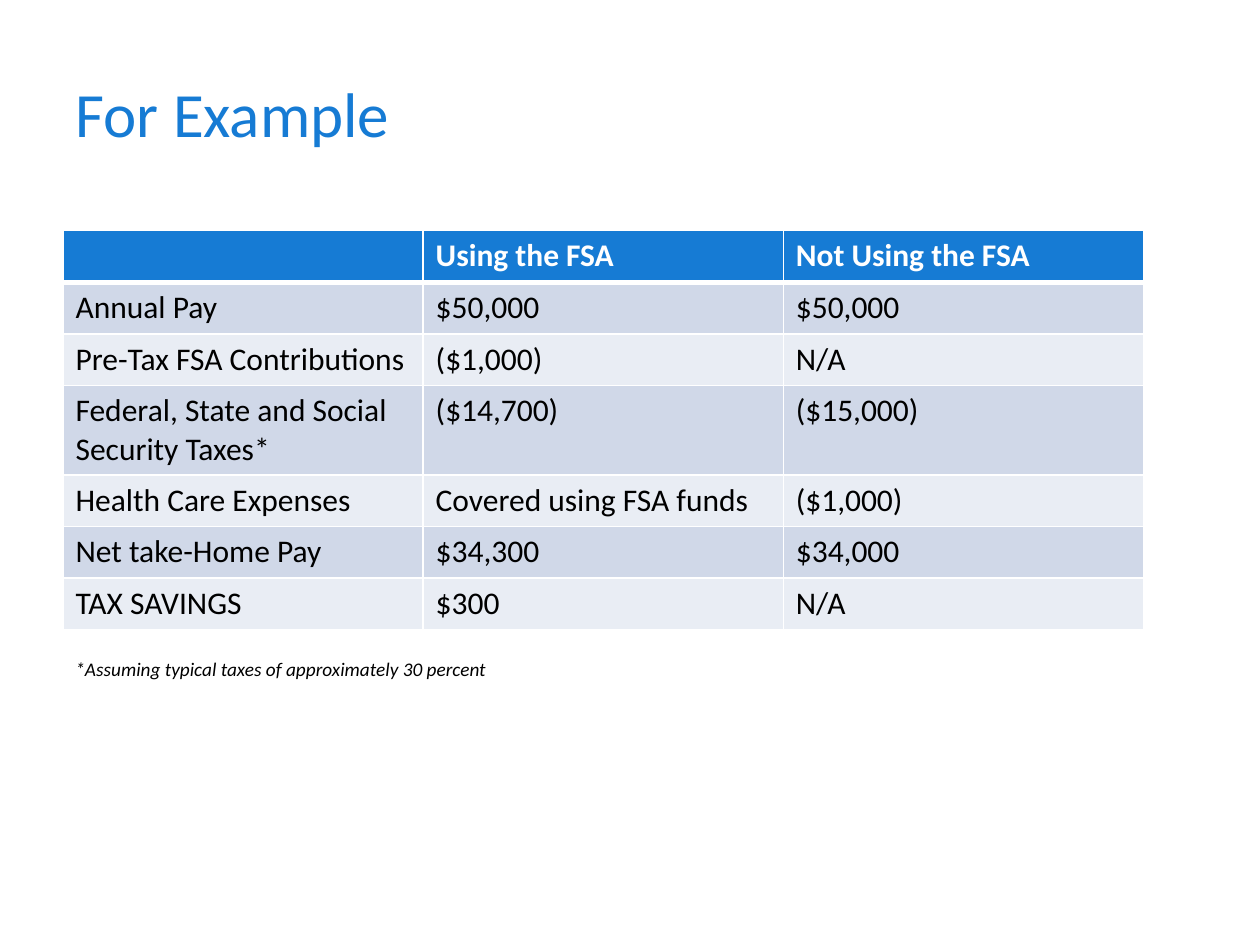
from dataclasses import dataclass

from lxml import etree
from pptx import Presentation
from pptx.dml.color import RGBColor
from pptx.enum.text import MSO_ANCHOR, PP_ALIGN
from pptx.oxml.ns import qn
from pptx.slide import Slide
from pptx.table import _Cell
from pptx.text.text import TextFrame
from pptx.util import Cm, Pt

LEFT = PP_ALIGN.LEFT
TOP = MSO_ANCHOR.TOP
MIDDLE = MSO_ANCHOR.MIDDLE

BLUE = RGBColor(0x16, 0x7B, 0xD4)
DARK_BAND = RGBColor(0xD0, 0xD8, 0xE8)
LIGHT_BAND = RGBColor(0xE9, 0xED, 0xF4)
WHITE = RGBColor(0xFF, 0xFF, 0xFF)
BLACK = RGBColor(0x00, 0x00, 0x00)

FONT = "Calibri"
MARGIN = Cm(1.27)
TABLE_TOP = Cm(4.65)
COLUMN_WIDTH = Cm(7.26)
ROW_HEIGHT = Cm(1.04)
THIN = Pt(1)
THICK = Pt(3)


@dataclass(frozen=True)
class ComparisonRow:
    label: str
    using: str
    not_using: str


HEADER = ComparisonRow("", "Using the FSA", "Not Using the FSA")
ROWS = [
    ComparisonRow("Annual Pay", "$50,000", "$50,000"),
    ComparisonRow("Pre-Tax FSA Contributions", "($1,000)", "N/A"),
    ComparisonRow("Federal, State and Social Security Taxes*", "($14,700)", "($15,000)"),
    ComparisonRow("Health Care Expenses", "Covered using FSA funds", "($1,000)"),
    ComparisonRow("Net take-Home Pay", "$34,300", "$34,000"),
    ComparisonRow("TAX SAVINGS", "$300", "N/A"),
]


def write_text(frame: TextFrame, text: str, *, size: int, color: RGBColor = BLACK,
               bold: bool = False, italic: bool = False) -> None:
    frame.word_wrap = True
    paragraph = frame.paragraphs[0]
    paragraph.alignment = LEFT
    if not text:
        paragraph.font.size = Pt(size)
        return
    run = paragraph.add_run()
    run.text = text
    run.font.name = FONT
    run.font.size = Pt(size)
    run.font.bold = bold
    run.font.italic = italic
    run.font.color.rgb = color


def set_borders(cell: _Cell, top: int, bottom: int) -> None:
    properties = cell._tc.get_or_add_tcPr()
    widths = {"a:lnL": THIN, "a:lnR": THIN, "a:lnT": top, "a:lnB": bottom}
    for tag, width in widths.items():
        line = etree.SubElement(properties, qn(tag), w=str(int(width)))
        fill = etree.SubElement(line, qn("a:solidFill"))
        etree.SubElement(fill, qn("a:srgbClr"), val=str(WHITE))


def draw_title(slide: Slide, text: str) -> None:
    title = slide.shapes.title
    title.left, title.top = MARGIN, MARGIN
    title.width, title.height = Cm(22.86), Cm(1.98)
    title.text_frame.vertical_anchor = MIDDLE
    write_text(title.text_frame, text, size=36, color=BLUE)


def draw_table(slide: Slide, rows: list[ComparisonRow]) -> None:
    table = slide.shapes.add_table(len(rows), 3, MARGIN, TABLE_TOP,
                                   COLUMN_WIDTH * 3, ROW_HEIGHT * len(rows)).table
    for column in table.columns:
        column.width = COLUMN_WIDTH
    for index, row in enumerate(rows):
        table.rows[index].height = ROW_HEIGHT
        is_header = index == 0
        band = BLUE if is_header else DARK_BAND if index % 2 else LIGHT_BAND
        for column_index, text in enumerate((row.label, row.using, row.not_using)):
            cell = table.cell(index, column_index)
            set_borders(cell, top=THICK if index == 1 else THIN,
                        bottom=THICK if is_header else THIN)
            cell.fill.solid()
            cell.fill.fore_color.rgb = band
            cell.vertical_anchor = TOP
            write_text(cell.text_frame, text, size=18, bold=is_header,
                       color=WHITE if is_header else BLACK)


def draw_footnote(slide: Slide, text: str) -> None:
    footnote = slide.shapes.add_textbox(MARGIN, Cm(13.13), Cm(17.15), Cm(0.74))
    write_text(footnote.text_frame, text, size=11, italic=True)


def main() -> None:
    presentation = Presentation()
    presentation.slide_width = Cm(25.4)
    presentation.slide_height = Cm(19.05)
    slide = presentation.slides.add_slide(presentation.slide_layouts[5])
    draw_title(slide, "For Example")
    draw_table(slide, [HEADER, *ROWS])
    draw_footnote(slide, "*Assuming typical taxes of approximately 30 percent")
    presentation.save("out.pptx")


if __name__ == "__main__":
    main()
